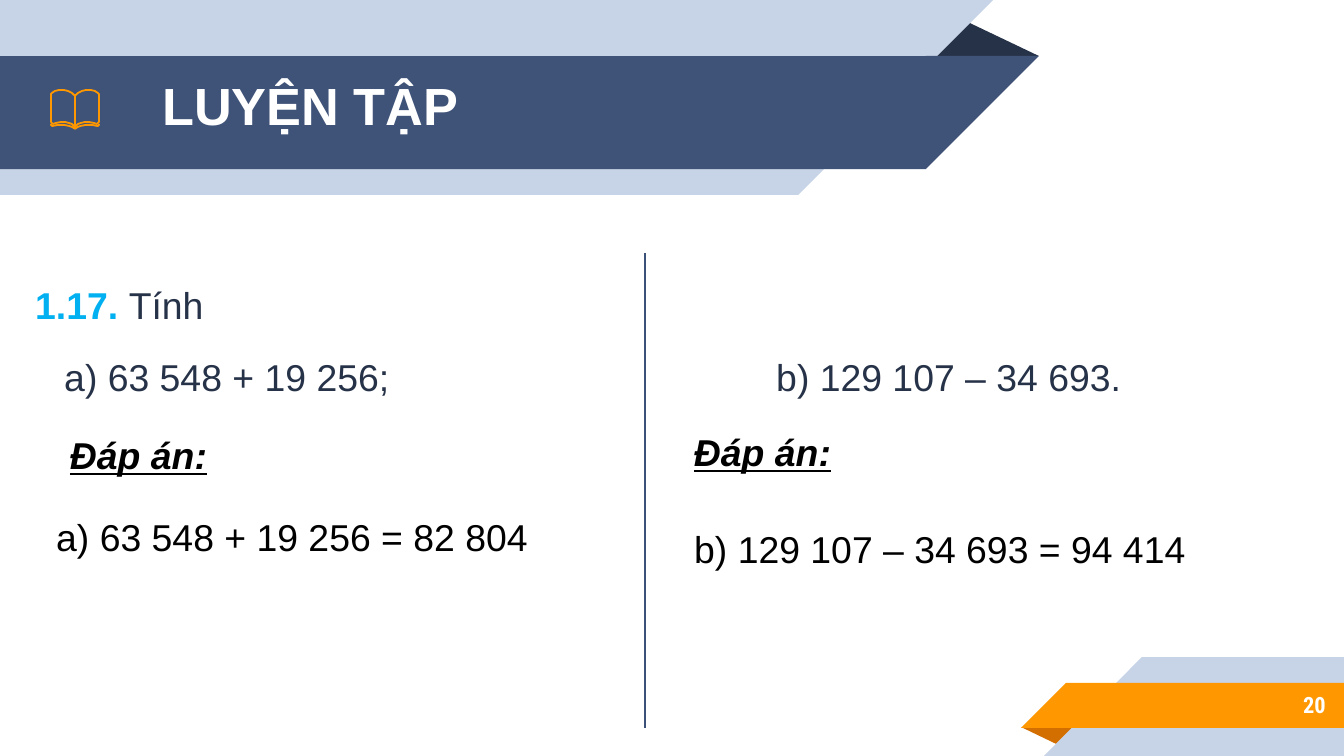
from lxml import etree
from pptx import Presentation
from pptx.dml.color import RGBColor
from pptx.enum.shapes import MSO_CONNECTOR, MSO_SHAPE
from pptx.enum.text import MSO_ANCHOR, MSO_AUTO_SIZE, PP_ALIGN
from pptx.oxml.ns import qn
from pptx.util import Emu, Pt

PX = 914400 / 134.4
RECTANGLE = MSO_SHAPE.RECTANGLE
TRIANGLE = MSO_SHAPE.ISOSCELES_TRIANGLE
RIGHT_TRIANGLE = MSO_SHAPE.RIGHT_TRIANGLE
STRAIGHT = MSO_CONNECTOR.STRAIGHT
TOP, MIDDLE = MSO_ANCHOR.TOP, MSO_ANCHOR.MIDDLE
GROW, FIXED = MSO_AUTO_SIZE.SHAPE_TO_FIT_TEXT, MSO_AUTO_SIZE.NONE
LEFT, CENTER = PP_ALIGN.LEFT, PP_ALIGN.CENTER
RIGHT, JUSTIFY = PP_ALIGN.RIGHT, PP_ALIGN.JUSTIFY

COLORS = {
    "pale": "C7D3E6",
    "navy": "3F5378",
    "ink": "263248",
    "orange": "FF9800",
    "rust": "D26F00",
    "sky": "00B0F0",
    "divider": "3C5177",
    "white": "FFFFFF",
    "black": "000000",
}

PAGE_EDGE = [
    (0, 95), (0, 127), (3, 124), (6, 123), (10, 122), (14, 122), (19, 123),
    (22, 124), (23, 123), (24, 122), (24, 94), (23, 93), (20, 91), (16, 90),
    (11, 90), (7, 91), (3, 93), (1, 95),
]
COVER_EDGE = [
    (24, 124), (24, 125), (23, 126), (22, 126), (17, 125), (11, 125),
    (6, 126), (3, 127), (0, 129),
]
SPINE = 75


def px(length):
    """Turn a length in px into EMU."""
    return Emu(round(length * PX))


def color(name):
    """Look up a named colour."""
    return RGBColor.from_string(COLORS[name])


def add_block(slide, kind, box, fill, rotation=0, flip=False):
    """Add a filled preset shape without a line."""
    shape = slide.shapes.add_shape(kind, *map(px, box))
    shape.shadow.inherit = False
    shape.fill.solid()
    shape.fill.fore_color.rgb = color(fill)
    shape.line.fill.background()
    shape.rotation = rotation
    if flip:
        shape.element.spPr.find(qn("a:xfrm")).set("flipH", "1")
    return shape


def add_fold(slide, box, fill, rotation=0):
    """Add the folded corner behind a ribbon."""
    fold = add_block(slide, TRIANGLE, box, fill, rotation)
    fold.adjustments[0] = 0.32


def add_ribbon(slide, band, slant_box, fill, rotation=0):
    """Add a band and the slanted end that continues it."""
    add_block(slide, RECTANGLE, band, fill, rotation, flip=True)
    add_block(slide, RIGHT_TRIANGLE, slant_box, fill, rotation, flip=True)


def add_outline(slide, edge, side, close):
    """Draw one edge of the book on one side of its spine."""
    points = [(SPINE + side * offset, top) for offset, top in edge]
    builder = slide.shapes.build_freeform(*points[0], scale=PX)
    builder.add_line_segments(points[1:], close=close)
    shape = builder.convert_to_shape()
    shape.shadow.inherit = False
    shape.fill.background()
    shape.line.color.rgb = color("orange")
    shape.line.width = Pt(0.96)


def add_book(slide):
    """Draw the open book as two mirrored halves."""
    for edge, close in ((COVER_EDGE, False), (PAGE_EDGE, True)):
        for side in (-1, 1):
            add_outline(slide, edge, side, close)


def add_run(paragraph, text, size=20, font="Arial", fill="black", bold=False,
            italic=False, underline=False):
    """Add one formatted run to a paragraph."""
    run = paragraph.add_run()
    run.text = text
    run.font.size = Pt(size)
    run.font.name = font
    run.font.color.rgb = color(fill)
    run.font.bold = bold
    run.font.italic = italic
    run.font.underline = underline


def write(shape, text, align=JUSTIFY, spacing=1.0, anchor=TOP, fit=GROW,
          **style):
    """Write one paragraph in a shape and return it."""
    frame = shape.text_frame
    frame.word_wrap = True
    frame.auto_size = fit
    frame.vertical_anchor = anchor
    paragraph = frame.paragraphs[0]
    paragraph.alignment = align
    paragraph.line_spacing = spacing
    add_run(paragraph, text, **style)
    return paragraph


def add_text(slide, box, text, **style):
    """Add a text box with one paragraph and return the paragraph."""
    return write(slide.shapes.add_textbox(*map(px, box)), text, **style)


def place_title(slide, box, text):
    """Move the title placeholder to the front and fill it."""
    title = slide.shapes.title
    title.element.getparent().append(title.element)
    title.left, title.top, title.width, title.height = map(px, box)
    write(title, text, size=28, fill="white", bold=True)


def add_divider(slide, left, top, bottom):
    """Add the vertical line between the columns."""
    line = slide.shapes.add_connector(
        STRAIGHT, px(left), px(top), px(left), px(bottom))
    line.line.color.rgb = color("divider")
    line.line.width = Pt(0.75)
    etree.SubElement(line.element.spPr, qn("a:effectLst"))


def main():
    """Build and save the exercise slide."""
    presentation = Presentation()
    presentation.slide_width, presentation.slide_height = px(1344), px(756)
    slide = presentation.slides.add_slide(presentation.slide_layouts[5])

    add_fold(slide, (925, 19, 114, 37), "ink")
    add_ribbon(slide, (0, 0, 798, 195), (798, 0, 195, 195), "pale", 180)
    add_ribbon(slide, (0, 56, 926, 113), (926, 56, 113, 113), "navy", 180)
    add_fold(slide, (1021, 727, 58, 19), "rust", 180)
    add_ribbon(slide, (1142, 657, 202, 99), (1044, 657, 98, 99), "pale")
    add_ribbon(slide, (1066, 683, 278, 45), (1021, 683, 45, 45), "orange")
    add_text(slide, (1120, 681, 219, 47), "20", align=RIGHT, anchor=MIDDLE,
             fit=FIXED, size=12, font="Roboto Condensed", fill="white",
             bold=True)
    add_book(slide)
    place_title(slide, (149, 67, 382, 77), "LUYỆN TẬP")

    exercise = add_text(slide, (22, 253, 636, 73), "1.17. ", spacing=1.5,
                        fill="sky", bold=True)
    add_run(exercise, "Tính", fill="ink")
    add_text(slide, (51, 325, 426, 82), "a) 63 548 + 19 256;", spacing=1.5,
             fill="ink")
    add_text(slide, (763, 325, 426, 73), "b) 129 107 – 34 693.", spacing=1.5,
             fill="ink")
    for left, top in ((594, 423), (-30, 426)):
        add_text(slide, (left, top, 337, 59), "Đáp án:", align=CENTER,
                 bold=True, italic=True, underline=True)
    add_text(slide, (43, 508, 594, 59), "a) 63 548 + 19 256 = 82 804",
             align=LEFT)
    add_text(slide, (681, 497, 547, 82), "b) 129 107 – 34 693 = 94 414",
             spacing=1.5)
    add_divider(slide, 645, 253, 728)
    presentation.save("out.pptx")


if __name__ == "__main__":
    main()
